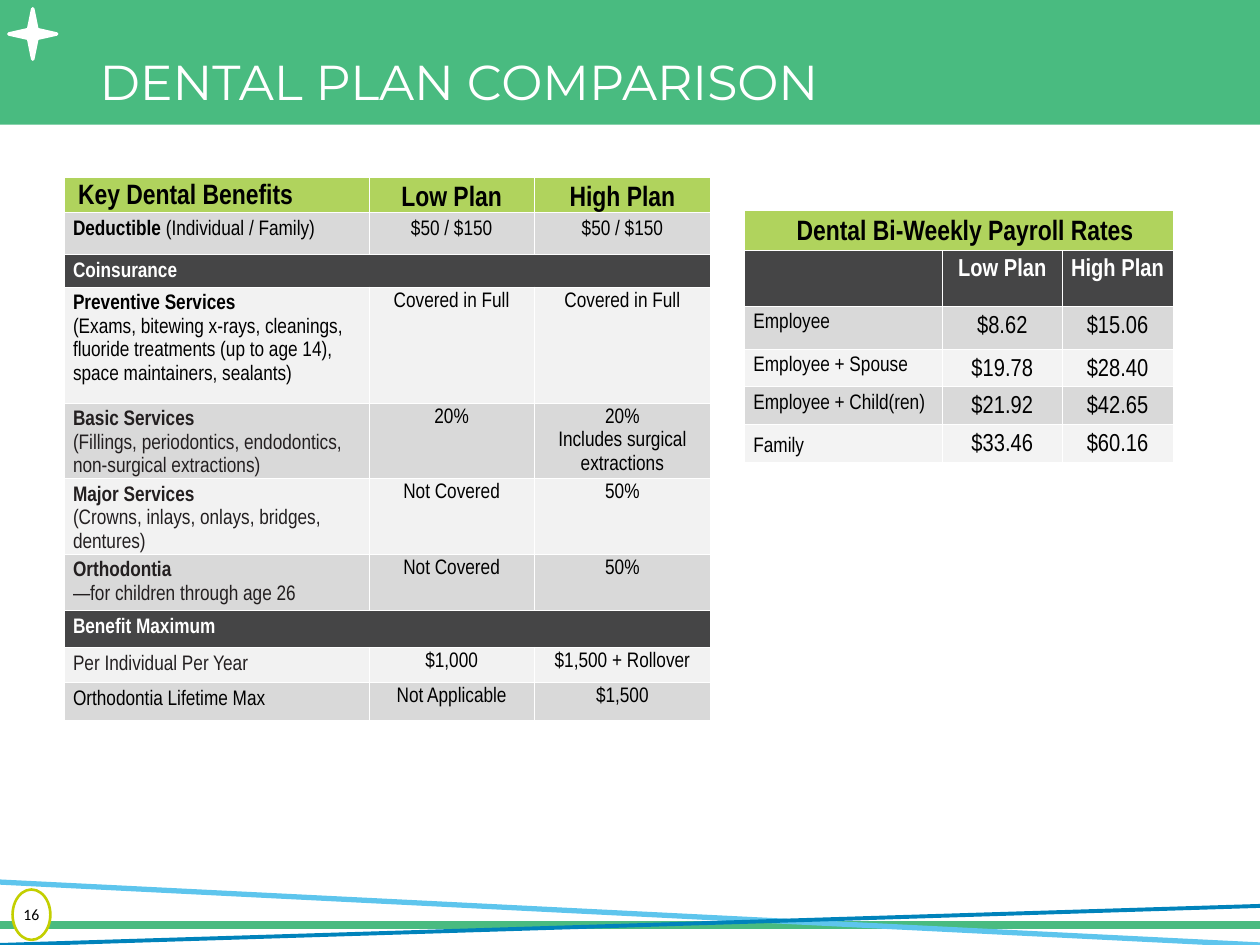
import lxml.etree
import pptx
import pptx.dml.color
import pptx.enum.shapes
import pptx.enum.text
import pptx.oxml
import pptx.oxml.ns
import pptx.util

Inches, Pt = pptx.util.Inches, pptx.util.Pt
RGBColor = pptx.dml.color.RGBColor
Shape = pptx.enum.shapes.MSO_SHAPE
Align = pptx.enum.text.PP_ALIGN
Anchor = pptx.enum.text.MSO_ANCHOR
qn = pptx.oxml.ns.qn

WHITE = RGBColor(0xFF, 0xFF, 0xFF)
BLACK = RGBColor(0, 0, 0)
INK = RGBColor(0x23, 0x1F, 0x20)
GREEN = RGBColor(0x49, 0xBB, 0x80)
SKY = RGBColor(0x5E, 0xC5, 0xED)
BLUE = RGBColor(0x00, 0x83, 0xBB)
OLIVE = RGBColor(0xC3, 0xCF, 0x00)
LIME = RGBColor(0xB0, 0xD3, 0x5D)
DARK = RGBColor(0x45, 0x45, 0x46)
GRAY = RGBColor(0xD9, 0xD9, 0xD9)
PALE = RGBColor(0xF2, 0xF2, 0xF2)
MIST = RGBColor(0xF3, 0xF3, 0xF3)

NARROW = "Arial Narrow"
EDGES = ("a:lnL", "a:lnR", "a:lnT", "a:lnB")
LABEL = (0.01, 0.03, 0.01, 0)
VALUE = (0.01, 0.01, 0.01, 0)
RATE = (0.04, 0.04, 0.04, 0.04)

BENEFITS = [
    (GRAY, BLACK, "*Deductible* (Individual / Family)", "$50 / $150", "$50 / $150"),
    (DARK, WHITE, "*Coinsurance*"),
    (PALE, BLACK, "*Preventive Services*\n(Exams, bitewing x-rays, cleanings, fluoride "
     "treatments (up to age 14), space maintainers, sealants)",
     "Covered in Full", "Covered in Full"),
    (GRAY, INK, "*Basic Services*\n(Fillings, periodontics, endodontics, "
     "non-surgical extractions)", "20%", "20%\nIncludes surgical extractions"),
    (PALE, INK, "*Major Services*\n(Crowns, inlays, onlays, bridges, dentures)",
     "Not Covered", "50%"),
    (GRAY, INK, "*Orthodontia*\n—for children through age 26", "Not Covered", "50%"),
    (DARK, WHITE, "*Benefit Maximum*"),
    (PALE, INK, "Per Individual Per Year", "$1,000", "$1,500 + Rollover"),
    (GRAY, BLACK, "Orthodontia Lifetime Max", "Not Applicable", "$1,500"),
]
RATES = [
    ("Employee", "$8.62", "$15.06"),
    ("Employee + Spouse", "$19.78", "$28.40"),
    ("Employee + Child(ren)", "$21.92", "$42.65"),
    ("Family", "$33.46", "$60.16"),
]


def write(frame, text, size=12, color=BLACK, font=NARROW, align=Align.LEFT,
          indent=0, spacing=None, after=None):
    """Write one paragraph per line, with bold between asterisks."""
    for n, line in enumerate(text.split("\n")):
        para = frame.add_paragraph() if n else frame.paragraphs[0]
        para.alignment = align
        if indent:
            para._p.get_or_add_pPr().set("marL", str(Inches(indent)))
        if spacing:
            para.line_spacing = spacing
        if after:
            para.space_after = Pt(after)
        for k, part in enumerate(line.split("*")):
            if part:
                run = para.add_run()
                run.text = part
                run.font.size = Pt(size)
                run.font.name = font
                run.font.bold = k % 2 == 1
                run.font.color.rgb = color


def shape(slide, kind, box, fill, line=None, width=1):
    """Add a filled preset shape."""
    item = slide.shapes.add_shape(kind, *map(Inches, box))
    item.shadow.inherit = False
    item.fill.solid()
    item.fill.fore_color.rgb = fill
    if line is None:
        item.line.fill.background()
    else:
        item.line.color.rgb = line
        item.line.width = Pt(width)
    return item


def stripe(slide, ends, color, width):
    """Add a straight coloured line."""
    item = slide.shapes.add_connector(
        pptx.enum.shapes.MSO_CONNECTOR.STRAIGHT, *map(Inches, ends))
    item.line.color.rgb = color
    item.line.width = Pt(width)
    lxml.etree.SubElement(item.element.spPr, qn("a:effectLst"))


def grid(slide, left, top, cols, rows):
    """Add an unstyled table with the given column and row sizes."""
    table = slide.shapes.add_table(
        len(rows), len(cols), Inches(left), Inches(top),
        Inches(sum(cols)), Inches(sum(rows))).table
    table.first_row = table.horz_banding = False
    for col, width in zip(table.columns, cols):
        col.width = Inches(width)
    for row, height in zip(table.rows, rows):
        row.height = Inches(height)
    return table


def paint(cell, fill):
    """Give a cell thin white borders and a fill."""
    props = cell._tc.get_or_add_tcPr()
    for edge in EDGES:
        line = lxml.etree.SubElement(props, qn(edge), w=str(Pt(0.5)))
        solid = lxml.etree.SubElement(line, qn("a:solidFill"))
        lxml.etree.SubElement(solid, qn("a:srgbClr"), val=str(WHITE))
    cell.fill.solid()
    cell.fill.fore_color.rgb = fill


def put(cell, text, inset=LABEL, anchor=Anchor.TOP, **style):
    """Write text in a cell with its insets and anchor."""
    (cell.margin_left, cell.margin_top,
     cell.margin_right, cell.margin_bottom) = map(Inches, inset)
    cell.vertical_anchor = anchor
    write(cell.text_frame, text, spacing=1.19, **style)


def span(table, row):
    """Merge a whole row."""
    table.cell(row, 0).merge(table.cell(row, len(table.columns) - 1))


def benefits(slide):
    """Build the table of key dental benefits."""
    rows = [0.27, 0.33, 0.26, 0.92, 0.6, 0.6, 0.45, 0.29, 0.28, 0.3]
    table = grid(slide, 0.51, 1.41, [2.42, 1.31, 1.4], rows)
    for c, text in enumerate(["*Key Dental Benefits*", "*Low Plan*", "*High Plan*"]):
        cell = table.cell(0, c)
        paint(cell, LIME)
        put(cell, text, LABEL if c else VALUE[:1] + (0, 0.01, 0), Anchor.MIDDLE,
            size=16, align=Align.CENTER if c else Align.LEFT, indent=0 if c else 0.1)
    for r, (fill, color, label, *values) in enumerate(BENEFITS, 1):
        for c in range(3):
            paint(table.cell(r, c), fill)
        put(table.cell(r, 0), label, color=color, indent=0.06)
        if not values:
            span(table, r)
        for c, text in enumerate(values, 1):
            put(table.cell(r, c), text, LABEL if r == 1 else VALUE,
                align=Align.CENTER, after=6 if r == 1 else None)


def rates(slide):
    """Build the table of payroll rates."""
    table = grid(slide, 5.91, 1.67, [1.57, 0.95, 0.88],
                 [0.32, 0.44, 0.34, 0.3, 0.3, 0.3])
    for c in range(3):
        for r, fill in enumerate([LIME, DARK, GRAY, MIST, GRAY, MIST]):
            paint(table.cell(r, c), fill)
    put(table.cell(0, 0), "*Dental Bi-Weekly Payroll Rates*", (0.01, 0, 0.01, 0),
        Anchor.MIDDLE, size=16, align=Align.CENTER, indent=0.1)
    span(table, 0)
    for c, text in enumerate(["*Low Plan*", "*High Plan*"], 1):
        put(table.cell(1, c), text, size=14, color=WHITE, align=Align.CENTER)
    for r, (label, *values) in enumerate(RATES, 2):
        anchor = Anchor.MIDDLE if label == "Family" else Anchor.TOP
        put(table.cell(r, 0), label, anchor=anchor, indent=0.06)
        for c, text in enumerate(values, 1):
            put(table.cell(r, c), text, RATE, anchor, size=14, align=Align.CENTER)


def main():
    """Build and save the slide."""
    deck = pptx.Presentation()
    deck.slide_width, deck.slide_height = Inches(10), Inches(7.5)
    slide = deck.slides.add_slide(deck.slide_layouts[5])
    shape(slide, Shape.RECTANGLE, (-0.01, 0, 10.01, 0.99), GREEN)
    stripe(slide, (-0.01, 7.34, 10, 7.34), GREEN, 4.5)
    stripe(slide, (10, 7.5, -0.01, 7), SKY, 3)
    stripe(slide, (-0.01, 7.5, 10, 7.19), BLUE, 2.25)
    star = shape(slide, Shape.STAR_4_POINT, (0.07, 0.07, 0.38, 0.4), WHITE, WHITE, 2)
    star.adjustments[0] = 0.125
    title = slide.shapes.title
    slide.shapes.element.append(title.element)
    title.left, title.top, title.width, title.height = map(
        Inches, (0.69, 0.4, 8.62, 0.55))
    title.text_frame.vertical_anchor = Anchor.MIDDLE
    write(title.text_frame, "DENTAL PLAN COMPARISON", size=28, color=WHITE,
          font="Montserrat", spacing=0.9)
    badge = shape(slide, Shape.OVAL, (0.1, 7.06, 0.3, 0.4), WHITE, OLIVE, 1.5)
    frame = badge.text_frame
    frame.margin_left = frame.margin_top = frame.margin_right = frame.margin_bottom = 0
    frame.vertical_anchor = Anchor.MIDDLE
    write(frame, "16", size=9, font="Calibri", align=Align.CENTER)
    benefits(slide)
    rates(slide)
    deck.save("out.pptx")


if __name__ == "__main__":
    main()
